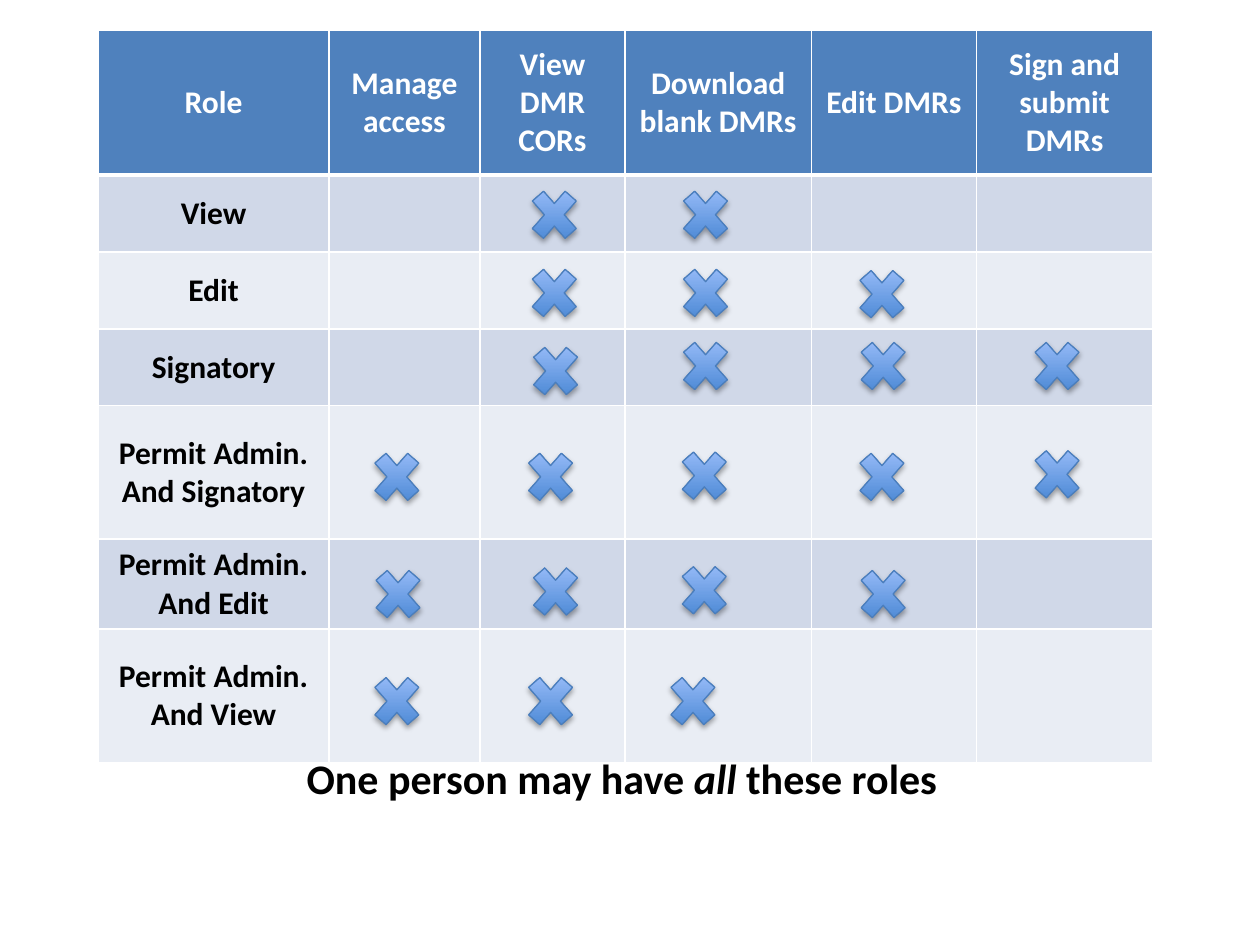
import pptx
import pptx.dml.color
import pptx.enum.shapes
import pptx.enum.text
import pptx.oxml.ns
import pptx.util
from lxml import etree

Inches = pptx.util.Inches
RGBColor = pptx.dml.color.RGBColor
qn = pptx.oxml.ns.qn

WHITE = RGBColor(0xFF, 0xFF, 0xFF)
BLACK = RGBColor(0, 0, 0)
HEADER_BLUE = RGBColor(0x4F, 0x81, 0xBD)
BAND_DARK = RGBColor(0xD0, 0xD8, 0xE8)
BAND_LIGHT = RGBColor(0xE9, 0xED, 0xF4)
MARK_BOTTOM = RGBColor(0x3F, 0x80, 0xCE)
MARK_TOP = RGBColor(0xA4, 0xC4, 0xFF)
MARK_LINE = RGBColor(0x4B, 0x7E, 0xBC)

HEADERS = ["Role", "Manage access", "View DMR CORs", "Download blank DMRs",
           "Edit DMRs", "Sign and submit DMRs"]
ROLES = ["View", "Edit", "Signatory", "Permit Admin. And Signatory",
         "Permit Admin. And Edit", "Permit Admin. And View"]
COLUMN_WIDTHS = [1.83, 1.2, 1.15, 1.48, 1.31, 1.4]
ROW_HEIGHTS = [1.15, 0.61, 0.61, 0.61, 1.06, 0.69, 1.06]
MARKS = {
    "View": [(4.15, 1.42), (5.35, 1.42)],
    "Edit": [(4.15, 2.04), (5.35, 2.04), (6.75, 2.05)],
    "Signatory": [(4.16, 2.66), (5.35, 2.62), (6.76, 2.62), (8.14, 2.62)],
    "Permit Admin. And Signatory": [(2.9, 3.5), (4.12, 3.5), (5.34, 3.49),
                                    (6.75, 3.5), (8.14, 3.48)],
    "Permit Admin. And Edit": [(2.91, 4.43), (4.16, 4.41), (5.34, 4.4), (6.76, 4.43)],
    "Permit Admin. And View": [(2.9, 5.28), (4.12, 5.28), (5.25, 5.28)],
}


class RolesPage:
    font_format = {"name": "Calibri", "bold": True}

    def __init__(self, deck):
        self.page = deck.slides.add_slide(deck.slide_layouts[6])

    def add_span(self, paragraph, text, size, color, **extra):
        paragraph.alignment = pptx.enum.text.PP_ALIGN.CENTER
        span = paragraph.add_run()
        span.text = text
        values = {**self.font_format, "size": pptx.util.Pt(size), **extra}
        for name, value in values.items():
            setattr(span.font, name, value)
        span.font.color.rgb = color

    def border(self, cell, top, bottom):
        properties = cell._tc.get_or_add_tcPr()
        for side, width in {"L": 1, "R": 1, "T": top, "B": bottom}.items():
            line = etree.SubElement(properties, qn(f"a:ln{side}"),
                                    w=str(pptx.util.Pt(width)))
            paint = etree.SubElement(line, qn("a:solidFill"))
            etree.SubElement(paint, qn("a:srgbClr"), val=str(WHITE))

    def table(self, left, top, headers, roles):
        frame = self.page.shapes.add_table(
            len(roles) + 1, len(headers), Inches(left), Inches(top),
            Inches(sum(COLUMN_WIDTHS)), Inches(sum(ROW_HEIGHTS)))
        grid = frame.table
        for column, width in zip(grid.columns, COLUMN_WIDTHS):
            column.width = Inches(width)
        for row, height in zip(grid.rows, ROW_HEIGHTS):
            row.height = Inches(height)
        texts = [headers] + [[role] + [""] * (len(headers) - 1) for role in roles]
        for row_index, row_texts in enumerate(texts):
            is_header = row_index == 0
            band = BAND_DARK if row_index % 2 else BAND_LIGHT
            for column_index, text in enumerate(row_texts):
                cell = grid.cell(row_index, column_index)
                self.border(cell, 3 if row_index == 1 else 1, 3 if is_header else 1)
                cell.fill.solid()
                cell.fill.fore_color.rgb = HEADER_BLUE if is_header else band
                cell.vertical_anchor = pptx.enum.text.MSO_ANCHOR.MIDDLE
                if text:
                    self.add_span(cell.text_frame.paragraphs[0], text, 18,
                                  WHITE if is_header else BLACK)

    def mark(self, left, top):
        cross = self.page.shapes.add_shape(
            pptx.enum.shapes.MSO_SHAPE.MATH_MULTIPLY,
            Inches(left), Inches(top), Inches(0.5), Inches(0.57))
        cross.fill.gradient()
        cross.fill.gradient_angle = 90
        for stop, color in zip(cross.fill.gradient_stops, (MARK_BOTTOM, MARK_TOP)):
            stop.color.rgb = color
        cross.line.color.rgb = MARK_LINE
        cross.line.width = pptx.util.Pt(0.75)
        cross.shadow.inherit = False
        effects = cross._element.spPr.find(qn("a:effectLst"))
        shadow = etree.SubElement(
            effects, qn("a:outerShdw"), blurRad=str(pptx.util.Pt(3.1)),
            dist=str(pptx.util.Pt(1.8)), dir="5400000", rotWithShape="0")
        shade = etree.SubElement(shadow, qn("a:srgbClr"), val=str(BLACK))
        etree.SubElement(shade, qn("a:alpha"), val="35000")

    def caption(self, left, top, width, height, spans):
        box = self.page.shapes.add_textbox(
            Inches(left), Inches(top), Inches(width), Inches(height))
        frame_format = {"word_wrap": True,
                        "auto_size": pptx.enum.text.MSO_AUTO_SIZE.SHAPE_TO_FIT_TEXT}
        for name, value in frame_format.items():
            setattr(box.text_frame, name, value)
        for text, italic in spans:
            self.add_span(box.text_frame.paragraphs[0], text, 24, BLACK, italic=italic)


def main():
    deck = pptx.Presentation()
    deck.slide_width, deck.slide_height = Inches(10), Inches(7.5)
    roles_page = RolesPage(deck)
    roles_page.table(0.78, 0.24, HEADERS, ROLES)
    for role in ROLES:
        for left, top in MARKS[role]:
            roles_page.mark(left, top)
    roles_page.caption(0.57, 5.92, 8.73, 0.5, [
        ("One person may have ", False), ("all", True), (" these roles", False)])
    deck.save("out.pptx")


if __name__ == "__main__":
    main()
